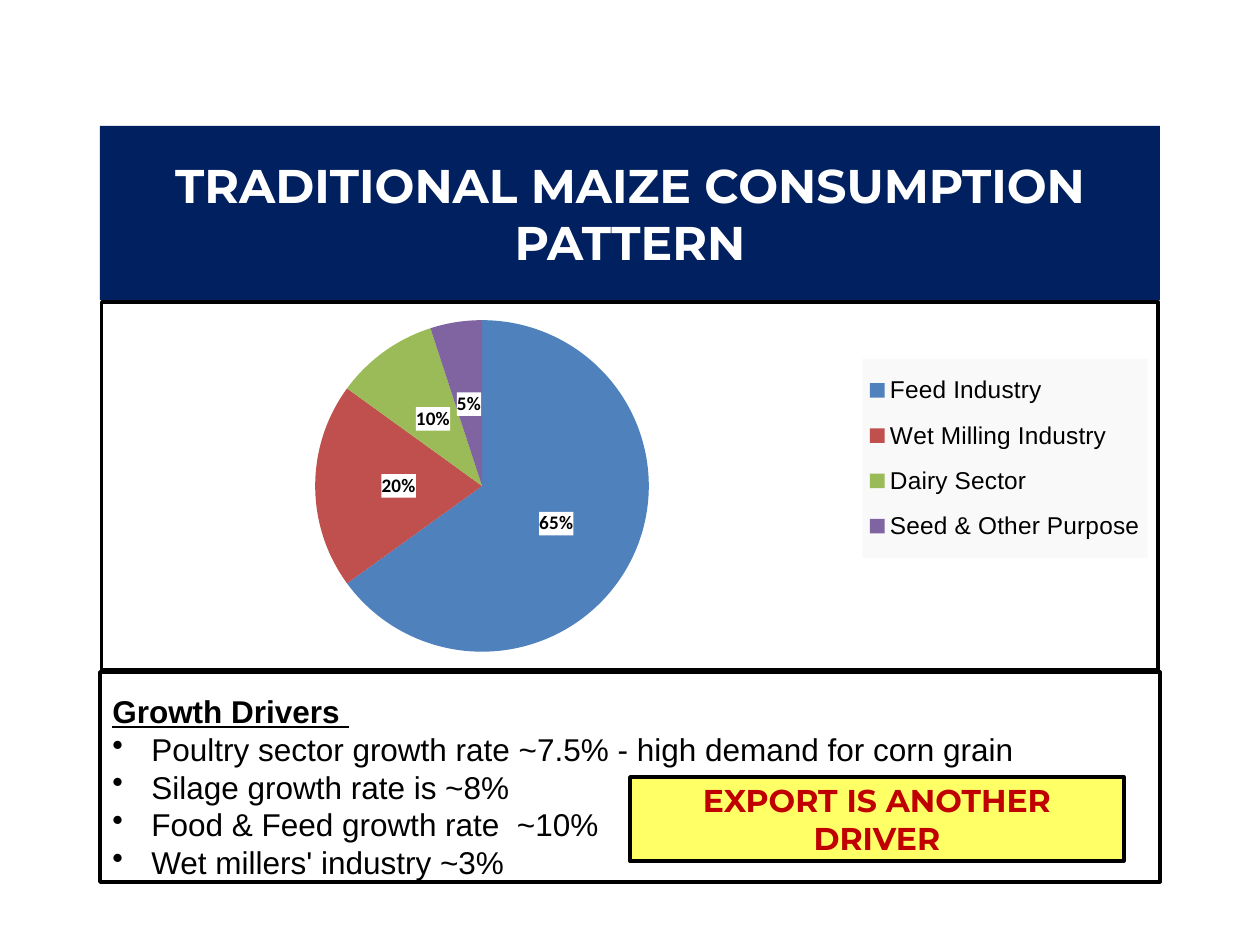
from lxml import etree
from pptx import Presentation
from pptx.chart.data import CategoryChartData
from pptx.dml.color import RGBColor
from pptx.enum.chart import XL_CHART_TYPE, XL_LABEL_POSITION, XL_LEGEND_POSITION
from pptx.enum.shapes import MSO_SHAPE
from pptx.enum.text import MSO_ANCHOR, PP_ALIGN
from pptx.oxml import parse_xml
from pptx.oxml.ns import nsdecls, qn
from pptx.util import Emu, Pt

EMU_PER_PX = 914400 / 126


def px(length):
    return Emu(round(length * EMU_PER_PX))


def rgb(hex_color):
    return RGBColor.from_string(hex_color)


class SlideBuilder:
    BODY, HEADING, CHART = "Arial", "Montserrat", "Calibri"
    BLACK, WHITE = "000000", "FFFFFF"
    BORDER = Pt(2)

    def __init__(self, slide):
        self.slide = slide

    def style(self, font, name, size, color, bold=False):
        font.name, font.size, font.bold = name, Pt(size), bold
        font.color.rgb = rgb(color)

    def panel(self, left, top, width, height, fill, border=None):
        panel = self.slide.shapes.add_shape(
            MSO_SHAPE.RECTANGLE, px(left), px(top), px(width), px(height))
        panel.shadow.inherit = False
        panel.fill.solid()
        panel.fill.fore_color.rgb = rgb(fill)
        if border:
            panel.line.color.rgb = rgb(border)
            panel.line.width = self.BORDER
        else:
            panel.line.fill.background()
        panel.text_frame.word_wrap = True
        panel.text_frame.vertical_anchor = MSO_ANCHOR.MIDDLE
        return panel.text_frame

    def banner(self, box, text, size, color, fill, border=None):
        paragraph = self.panel(*box, fill, border).paragraphs[0]
        paragraph.text = text
        paragraph.alignment = PP_ALIGN.CENTER
        self.style(paragraph.font, self.HEADING, size, color, bold=True)

    def bullet_panel(self, box, heading, items, indent):
        frame = self.panel(*box, self.WHITE, self.BLACK)
        title = frame.paragraphs[0]
        title.text = heading
        title.line_spacing = 1.5
        title.alignment = PP_ALIGN.LEFT
        self.style(title.font, self.BODY, 18, self.BLACK, bold=True)
        title.font.underline = True
        for item in items:
            paragraph = frame.add_paragraph()
            paragraph.text = item
            paragraph.alignment = PP_ALIGN.LEFT
            self.style(paragraph.font, self.BODY, 18, self.BLACK)
            properties = paragraph._p.get_or_add_pPr()
            properties.set("marL", str(px(indent)))
            properties.set("indent", str(-px(indent)))
            bullet = parse_xml(f'<a:buChar {nsdecls("a")} char="•"/>')
            properties.append(bullet)

    def chart_fill(self, text_properties, fill, border=None):
        """Fill a chart part; its shape properties precede its text properties."""
        line = ""
        if border:
            line = (f'<a:ln w="{self.BORDER}"><a:solidFill><a:srgbClr val="{border}"/>'
                    '</a:solidFill></a:ln>')
        text_properties.addprevious(parse_xml(
            f'<c:spPr {nsdecls("c", "a")}><a:solidFill><a:srgbClr val="{fill}"/>'
            f'</a:solidFill>{line}</c:spPr>'))

    def chart_layout(self, part, x, y, w, h, inner=False):
        """Place a chart part by fractions of the chart area."""
        for old in part.findall(qn("c:layout")):
            part.remove(old)
        layout = etree.Element(qn("c:layout"))
        manual = etree.SubElement(layout, qn("c:manualLayout"))
        settings = [("layoutTarget", "inner")] if inner else []
        settings += [("xMode", "edge"), ("yMode", "edge"),
                     ("x", x), ("y", y), ("w", w), ("h", h)]
        for tag, value in settings:
            etree.SubElement(manual, qn(f"c:{tag}")).set("val", str(value))
        position = part.find(qn("c:legendPos"))
        part.insert(0 if position is None else 1, layout)

    def pie(self, box, series_name, shares):
        data = CategoryChartData()
        data.categories = [name for name, _, _ in shares]
        data.add_series(series_name, [value for _, value, _ in shares])
        chart = self.slide.shapes.add_chart(
            XL_CHART_TYPE.PIE, *map(px, box), data).chart
        chart.has_title = False
        self.style(chart.font, self.CHART, 10, self.BLACK)
        self.chart_fill(chart._chartSpace.find(qn("c:txPr")), self.WHITE, self.BLACK)

        # Slices and percentages
        plot = chart.plots[0]
        plot.vary_by_categories = True
        for index, (_, _, color) in enumerate(shares):
            slice_fill = plot.series[0].points[index].format.fill
            slice_fill.solid()
            slice_fill.fore_color.rgb = rgb(color)
        labels = plot.series[0].data_labels
        labels.show_percentage = True
        labels.show_value = False
        labels.number_format = "0%"
        labels.number_format_is_linked = False
        labels.position = XL_LABEL_POSITION.CENTER
        self.style(labels.font, self.CHART, 11, self.BLACK, bold=True)
        self.chart_fill(labels._element.find(qn("c:txPr")), self.WHITE)
        plot_area = chart._chartSpace.chart.plotArea
        self.chart_layout(plot_area, 0.2, 0.05, 0.32, 0.9, inner=True)

        # Legend
        chart.has_legend = True
        legend = chart.legend
        legend.position = XL_LEGEND_POSITION.RIGHT
        legend.include_in_layout = False
        self.style(legend.font, self.BODY, 14, self.BLACK)
        self.chart_fill(legend._element.find(qn("c:txPr")), "F9F9F9")
        self.chart_layout(legend._element, 0.72, 0.155, 0.27, 0.54)


def main():
    presentation = Presentation()
    presentation.slide_width, presentation.slide_height = px(1260), px(945)
    builder = SlideBuilder(presentation.slides.add_slide(presentation.slide_layouts[6]))

    # Three stacked bands of equal width
    left, width = 100, 1060
    title_top, chart_top, drivers_top, bottom = 126, 300, 672, 882

    builder.banner((left, title_top, width, chart_top - title_top),
                   "TRADITIONAL MAIZE CONSUMPTION PATTERN", 27, "FFFFFF", "002060")

    builder.pie((left, chart_top, width, drivers_top - chart_top), "Series 1", [
        ("Feed Industry", 65, "4F81BD"),
        ("Wet Milling Industry", 20, "C0504D"),
        ("Dairy Sector", 10, "9BBB59"),
        ("Seed & Other Purpose", 5, "8064A2"),
    ])

    builder.bullet_panel((left, drivers_top, width, bottom - drivers_top),
                         "Growth Drivers ", [
        "Poultry sector growth rate ~7.5% - high demand for corn grain",
        "Silage growth rate is ~8%",
        "Food & Feed growth rate  ~10%",
        "Wet millers' industry ~3%",
    ], indent=39)

    # Callout over the drivers
    builder.banner((630, 777, 494, 84), "EXPORT IS ANOTHER DRIVER",
                   18, "C00000", "FFFF66", border="000000")

    presentation.save("out.pptx")


if __name__ == "__main__":
    main()
